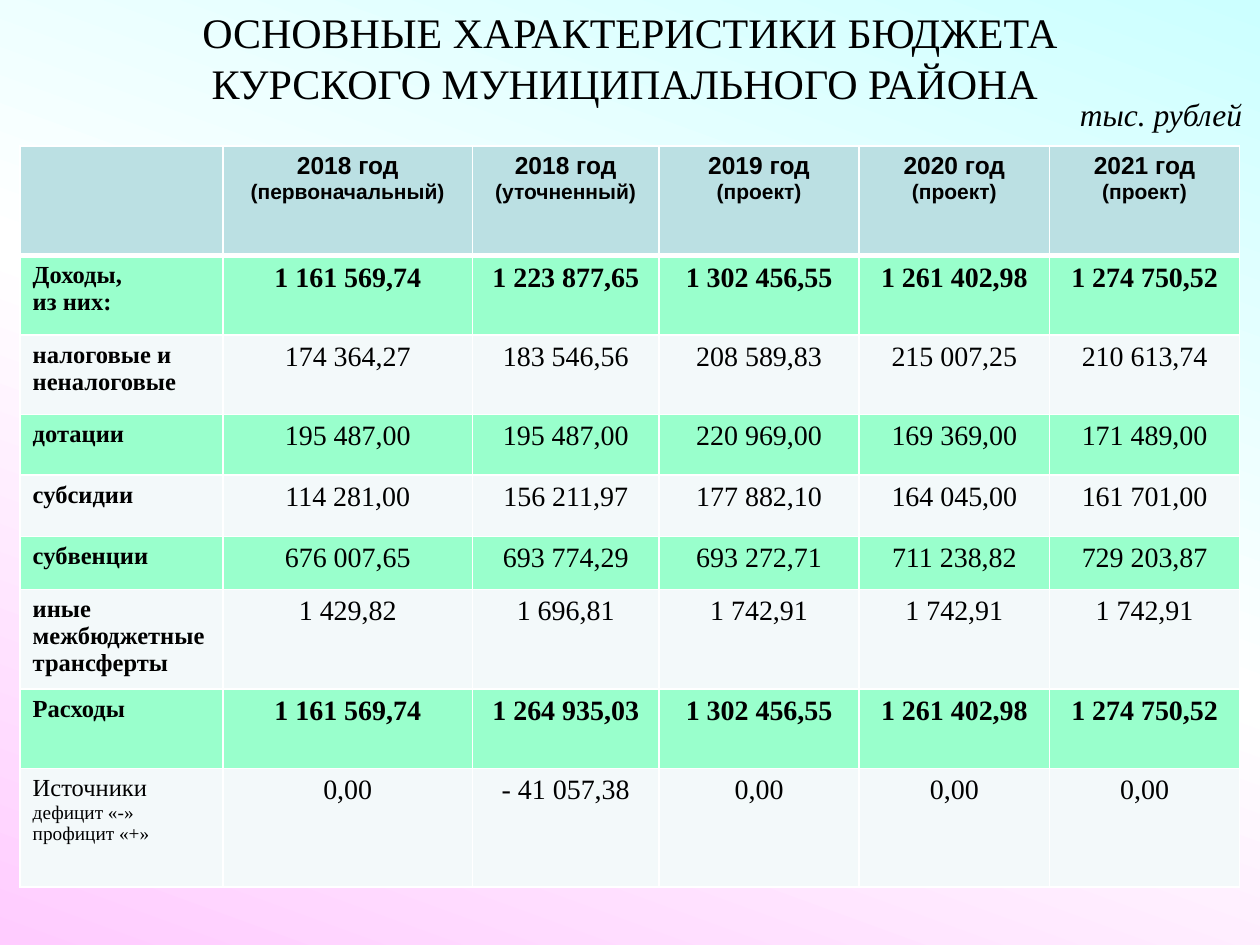
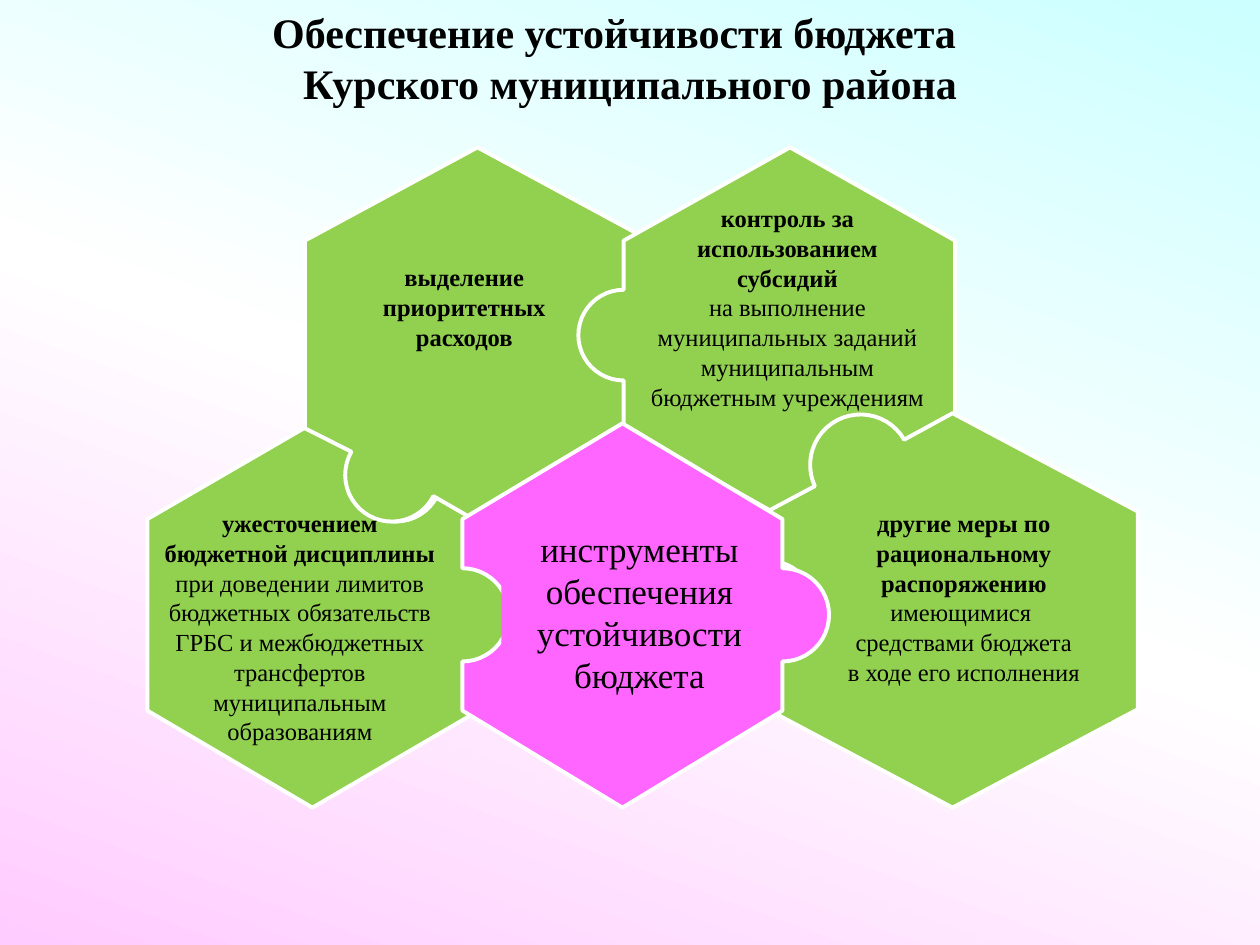
import copy
import math
from dataclasses import dataclass

import pptx
import pptx.dml.color
import pptx.enum.shapes
import pptx.enum.text
import pptx.oxml
import pptx.oxml.ns
import pptx.util

Inches = pptx.util.Inches
Pt = pptx.util.Pt
RGB = pptx.dml.color.RGBColor.from_string
ALIGN = pptx.enum.text.PP_ALIGN
qn = pptx.oxml.ns.qn


@dataclass(frozen=True)
class Theme:
    serif: str = "Times New Roman"
    sans: str = "Arial"
    ink: str = "000000"
    white: str = "FFFFFF"
    backdrop: tuple = ("CCFFFF", "FFFFFF", "FFCCFF")
    header: str = "BBE0E3"
    bands: tuple = ("99FFCC", "F3F9FA")
    green: str = "92D050"
    pink: str = "FF66FF"
    title: int = 24
    center: int = 20
    unit: int = 18
    value: int = 16
    text: int = 14
    small: int = 12
    note: int = 11
    leading: float = 1.2


theme = Theme()


def write(frame, lines, font=theme.serif, align=ALIGN.CENTER, italic=False, leading=theme.leading):
    """Fill a text frame; each line is a list of (text, size, bold) spans."""
    frame.word_wrap = True
    frame.vertical_anchor = pptx.enum.text.MSO_ANCHOR.TOP
    for index, spans in enumerate(lines):
        para = frame.paragraphs[0] if index == 0 else frame.add_paragraph()
        para.alignment = align
        if leading:
            para.line_spacing = Pt(round(spans[0][1] * leading))
        for text, size, bold in spans:
            span = para.add_run()
            span.text = text
            span.font.name = font
            span.font.size = Pt(size)
            span.font.bold = bold
            span.font.italic = italic
            span.font.color.rgb = RGB(theme.ink)


def add_page(deck, title_width, title_left, title_lines):
    """Add a slide with its title placeholder at the top edge."""
    page = deck.slides.add_slide(deck.slide_layouts[5])
    title = page.shapes.title
    title.left, title.top = Inches(title_left), Inches(0)
    title.width, title.height = Inches(title_width), Inches(0.91)
    title.text_frame.auto_size = pptx.enum.text.MSO_AUTO_SIZE.NONE
    write(title.text_frame, title_lines)
    return page


deck = pptx.Presentation()
deck.slide_width, deck.slide_height = Inches(10), Inches(7.5)

# Shared gradient background
fill = deck.slide_master.background.fill
fill.gradient()
fill.gradient_angle = 250
stop_list = next(deck.slide_master.element.iter(qn("a:gsLst")))
stop_list.insert(1, copy.deepcopy(stop_list[0]))
for index, (stop, color) in enumerate(zip(fill.gradient_stops, theme.backdrop)):
    stop.position = index / 2
    stop.color.rgb = RGB(color)

# Slide 1: budget table
page = add_page(deck, 7.72, 1.14, [
    [("ОСНОВНЫЕ ХАРАКТЕРИСТИКИ БЮДЖЕТА КУРСКОГО МУНИЦИПАЛЬНОГО РАЙОНА ", theme.title, False)],
])

years = [("2018 год", "(первоначальный)"), ("2018 год", "(уточненный)"), ("2019 год", "(проект)"),
         ("2020 год", "(проект)"), ("2021 год", "(проект)")]
# Label lines, values, whether the values are bold
budget_rows = [
    (["Доходы,", "из них:"],
     ["1 161 569,74", "1 223 877,65", "1 302 456,55", "1 261 402,98", "1 274 750,52"], True),
    (["налоговые и неналоговые"],
     ["174 364,27", "183 546,56", "208 589,83", "215 007,25", "210 613,74"], False),
    (["дотации"],
     ["195 487,00", "195 487,00", "220 969,00", "169 369,00", "171 489,00"], False),
    (["субсидии"],
     ["114 281,00", "156 211,97", "177 882,10", "164 045,00", "161 701,00"], False),
    (["субвенции"],
     ["676 007,65", "693 774,29", "693 272,71", "711 238,82", "729 203,87"], False),
    (["иные межбюджетные трансферты"],
     ["1 429,82", "1 696,81", "1 742,91", "1 742,91", "1 742,91"], False),
    (["Расходы"],
     ["1 161 569,74", "1 264 935,03", "1 302 456,55", "1 261 402,98", "1 274 750,52"], True),
    (["Источники", "дефицит «-»", "профицит «+»"],
     ["0,00", "- 41 057,38", "0,00", "0,00", "0,00"], False),
]
column_widths = [1.61, 1.98, 1.48, 1.59, 1.51, 1.51]
row_heights = [0.87, 0.63, 0.63, 0.48, 0.49, 0.42, 0.79, 0.63, 0.94]

table = page.shapes.add_table(len(row_heights), len(column_widths), Inches(0.16), Inches(1.16),
                              Inches(sum(column_widths)), Inches(sum(row_heights))).table
table.first_row = table.horz_banding = False
for column, width in zip(table.columns, column_widths):
    column.width = Inches(width)
for row, height in zip(table.rows, row_heights):
    row.height = Inches(height)

# Cell borders and fills
for row_index, row in enumerate(table.rows):
    for cell in row.cells:
        properties = cell._tc.get_or_add_tcPr()
        for side in "LRTB":
            thick = (row_index, side) in [(0, "B"), (1, "T")]
            properties.append(pptx.oxml.parse_xml(
                f'<a:ln{side} {pptx.oxml.ns.nsdecls("a")} w="{Pt(3 if thick else 1)}">'
                f'<a:solidFill><a:srgbClr val="{theme.white}"/></a:solidFill></a:ln{side}>'))
        cell.fill.solid()
        cell.fill.fore_color.rgb = RGB(theme.bands[(row_index - 1) % 2] if row_index else theme.header)

# Cell text
for column_index, (year, stage) in enumerate(years, start=1):
    write(table.cell(0, column_index).text_frame,
          [[(year, theme.text, True)], [(stage, theme.small, True)]], font=theme.sans, leading=None)
for row_index, (label, values, bold) in enumerate(budget_rows, start=1):
    is_balance = row_index == len(budget_rows)
    label_lines = [[(text, theme.note if is_balance and index else theme.text, not is_balance)]
                   for index, text in enumerate(label)]
    write(table.cell(row_index, 0).text_frame, label_lines, align=ALIGN.LEFT, leading=None)
    for column_index, value in enumerate(values, start=1):
        write(table.cell(row_index, column_index).text_frame,
              [[(value, theme.value, bold)]], leading=None)

# Unit of measure
unit_box = page.shapes.add_textbox(Inches(8.43), Inches(0.7), Inches(1.57), Inches(0.4))
write(unit_box.text_frame, [[("тыс. рублей", theme.unit, False)]], italic=True)

# Slide 2: puzzle of budget tools
page = add_page(deck, 9.75, 0, [
    [("Обеспечение устойчивости бюджета", theme.title, True)],
    [("Курского муниципального района", theme.title, True)],
])
second_line = page.shapes.title.text_frame.paragraphs[1]
second_line._p.get_or_add_pPr().set("marL", str(Inches(0.25)))

# Outlines hold corners (x, y) and arcs (center x, center y, radius, from degree, to degree)
discipline = [(2.48, 3.36), (3.14, 3.77, 0.37, 214, 27), (3.8, 4.12), (3.8, 4.88, 0.37, -90, 90),
              (3.8, 5.64), (2.48, 6.41), (1.17, 5.64), (1.17, 4.12)]
priority = [(3.79, 1.17), (5.16, 1.91), (5.16, 2.66, 0.36, 270, 90), (5.16, 3.4), (3.79, 4.14),
            (3.11, 3.77, 0.37, 27, 210), (2.42, 3.4), (2.42, 1.91)]
control = [(6.27, 1.17), (7.58, 1.91), (7.58, 3.4), (6.92, 3.78, 0.37, -31, -209), (6.27, 4.14),
           (4.95, 3.4), (4.95, 2.66, 0.36, 90, 270), (4.95, 1.91)]
other = [(7.56, 3.28), (9.03, 4.06), (9.03, 5.63), (7.56, 6.41), (6.09, 5.63),
         (6.09, 4.84, 0.39, 90, -90), (6.09, 4.06), (6.83, 3.69, 0.4, 155, 330)]
tools = [(4.94, 3.36), (6.21, 4.12), (6.21, 4.88, 0.37, -90, 90), (6.21, 5.64), (4.94, 6.41),
         (3.67, 5.64), (3.67, 4.88, 0.37, 90, -90), (3.67, 4.12)]

# Outline, color, text panel place, text lines
pieces = [
    (discipline, theme.green, None, None),
    (priority, theme.green, (2.66, 2.03, 2.05, 1.04),
     [[("выделение приоритетных расходов", theme.text, True)]]),
    (control, theme.green, None, None),
    (other, theme.green, (6.48, 3.98, 2.34, 1.75),
     [[("другие меры по рациональному распоряжению ", theme.text, True),
       ("имеющимися ", theme.text, False)],
      [("средствами бюджета", theme.text, False)],
      [("в ходе его исполнения", theme.text, False)]]),
    (tools, theme.pink, (3.98, 4.14, 2.19, 1.45),
     [[("инструменты обеспечения устойчивости бюджета", theme.center, False)]]),
]
for outline, color, place, lines in pieces:
    points = []
    for step in outline:
        if len(step) == 2:
            points.append(step)
            continue
        x, y, radius, start, end = step
        for part in range(25):
            angle = math.radians(start + (end - start) * part / 24)
            points.append((x + radius * math.cos(angle), y + radius * math.sin(angle)))
    points = [(Inches(x), Inches(y)) for x, y in points]
    builder = page.shapes.build_freeform(*points[0])
    builder.add_line_segments(points[1:], close=True)
    piece = builder.convert_to_shape()
    piece.shadow.inherit = False
    piece.fill.solid()
    piece.fill.fore_color.rgb = RGB(color)
    piece.line.color.rgb = RGB(theme.white)
    piece.line.width = Pt(2.25)
    if place:
        panel = page.shapes.add_shape(pptx.enum.shapes.MSO_SHAPE.RECTANGLE, *map(Inches, place))
        panel.shadow.inherit = False
        panel.fill.solid()
        panel.fill.fore_color.rgb = RGB(color)
        panel.line.fill.background()
        write(panel.text_frame, lines)

# Captions above the pieces
captions = [
    ((1.09, 3.98, 2.58, 2.14),
     [[("ужесточением", theme.text, True)],
      [("бюджетной дисциплины", theme.text, True)],
      [("при доведении лимитов бюджетных обязательств ГРБС и межбюджетных трансфертов "
        "муниципальным образованиям", theme.text, False)]]),
    ((5, 1.56, 2.5, 2.09),
     [[("контроль за использованием", theme.text, True)],
      [("субсидий", theme.text, True)],
      [("на выполнение муниципальных заданий муниципальным бюджетным учреждениям",
        theme.text, False)]]),
]
for place, lines in captions:
    box = page.shapes.add_textbox(*map(Inches, place))
    write(box.text_frame, lines)

deck.save("out.pptx")
